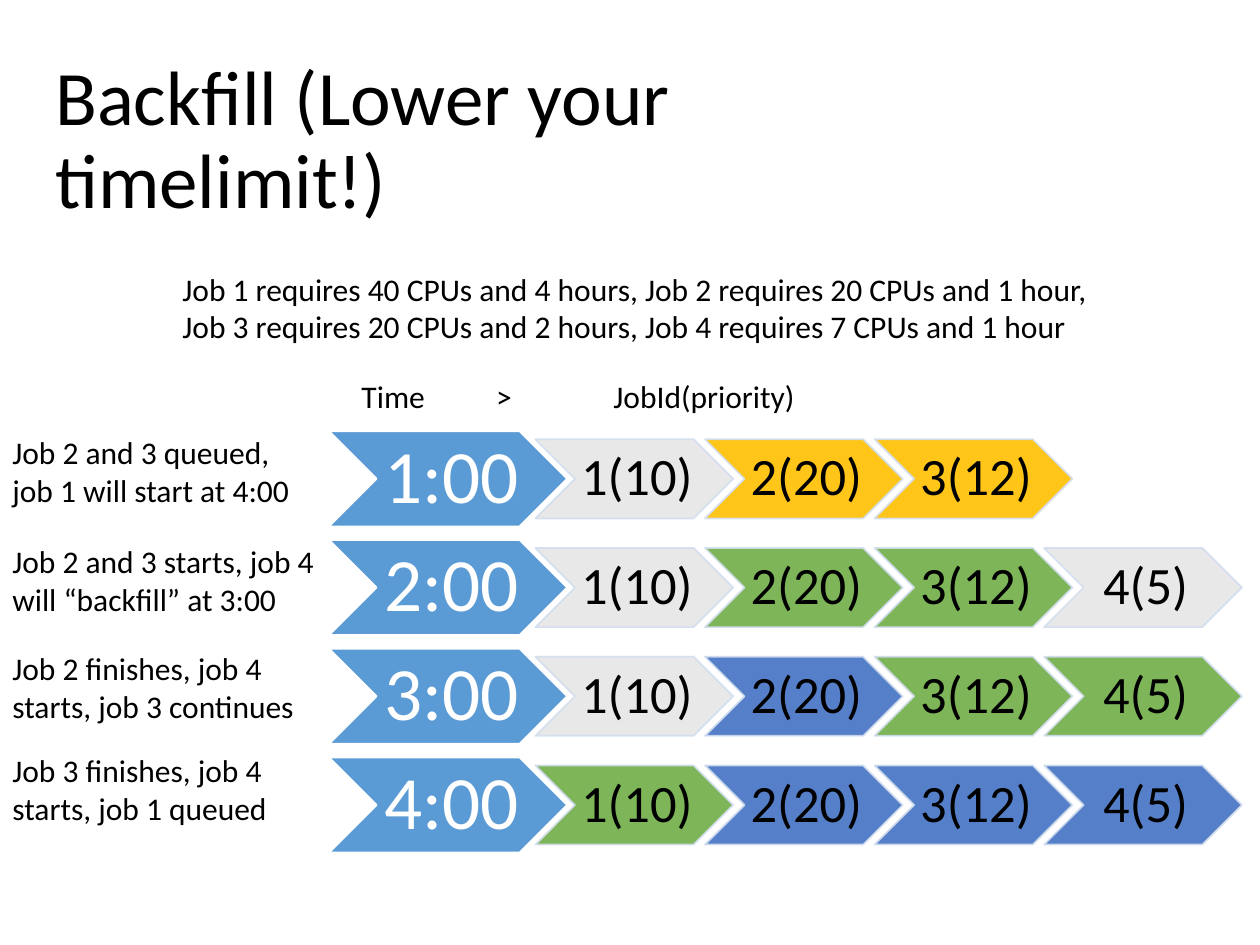
from lxml import etree
from pptx import Presentation
from pptx.dml.color import RGBColor
from pptx.enum import shapes, text
from pptx.oxml import ns
from pptx.util import Pt

HUES = {
    "ink": "000000", "white": "FFFFFF", "time": "5B9BD5", "edge": "D2DEEF",
    "wait": "E7E6E6", "queue": "FFC000", "run": "70AD47", "done": "4472C4",
}
JOBS = ["1(10)", "2(20)", "3(12)", "4(5)"]
# Time, state of each job, note, top of the note
ROWS = [
    ("1:00", ["wait", "queue", "queue"],
     "Job 2 and 3 queued, job 1 will start at 4:00", 244),
    ("2:00", ["wait", "run", "run", "wait"],
     "Job 2 and 3 starts, job 4 will “backfill” at 3:00", 306),
    ("3:00", ["wait", "done", "run", "run"],
     "Job 2 finishes, job 4 starts, job 3 continues", 367.2),
    ("4:00", ["run", "done", "done", "done"],
     "Job 3 finishes, job 4 starts, job 1 queued", 425.5),
]


def tint(paint, hue, alpha=100):
    paint.solid()
    paint.fore_color.rgb = RGBColor.from_string(HUES[hue])
    if alpha < 100:
        color = paint._xPr.find(ns.qn("a:solidFill"))[0]
        etree.SubElement(color, ns.qn("a:alpha"), val=str(alpha * 1000))


def write(slide, box, words, size=18, hue="ink", align="LEFT", anchor="TOP",
          inset=(7.2, 3.6, 7.2, 3.6), space=1.0, wrap=True, tabs=()):
    frame = slide.shapes.add_textbox(*map(Pt, box)).text_frame
    frame.word_wrap = wrap
    frame.vertical_anchor = getattr(text.MSO_ANCHOR, anchor)
    (frame.margin_left, frame.margin_top,
     frame.margin_right, frame.margin_bottom) = map(Pt, inset)
    frame.text = words
    for para in frame.paragraphs:
        para.alignment = getattr(text.PP_ALIGN, align)
        para.line_spacing = space
        if tabs:
            stops = etree.SubElement(para._p.get_or_add_pPr(), ns.qn("a:tabLst"))
            for stop in tabs:
                etree.SubElement(stops, ns.qn("a:tab"), pos=str(Pt(stop)), algn="l")
        para.font.name = "Calibri"
        para.font.size = Pt(size)
        para.font.color.rgb = RGBColor.from_string(HUES[hue])


def arrow(slide, box, words, size, fill, edge, ink, alpha, inset):
    left, top, width, height = box
    shape = slide.shapes.add_shape(shapes.MSO_SHAPE.CHEVRON, *map(Pt, box))
    shape.shadow.inherit = False
    tint(shape.fill, fill, alpha)
    shape.line.width = Pt(1)
    tint(shape.line.fill, edge, alpha)
    # The label fills the space between the notch and the point
    write(slide, (left + height / 2, top, width - height, height), words,
          size=size, hue=ink, align="CENTER", anchor="MIDDLE",
          inset=inset, space=0.9)


def header(slide, box):
    left, top, width, height = box
    write(slide, (left, top, 558, 104.4), "Backfill (Lower your timelimit!)",
          size=44, anchor="MIDDLE", space=0.9)
    write(slide, (left + 72.7, top + 121.7, 537.8, 51),
          "Job 1 requires 40 CPUs and 4 hours, Job 2 requires 20 CPUs and 1 hour,\n"
          "Job 3 requires 20 CPUs and 2 hours, Job 4 requires 7 CPUs and 1 hour",
          wrap=False)
    write(slide, (left + 175, top + height - 29, 264.2, 29),
          "Time\t>\tJobId(priority)", wrap=False, tabs=(77, 144))


def track(slide, box, time, states):
    left, top, width, height = box
    arrow(slide, (left, top, 136.1, height), time, 43,
          "time", "white", "white", 100, (4.3, 2.2, 0, 2.2))
    # Job arrows overlap at an equal step
    tall, step = 45.2, 96.9
    for i, state in enumerate(states):
        arrow(slide, (left + 118 + i * step, top + (height - tall) / 2, 113, tall),
              JOBS[i], 30, state, "edge", "ink", 90, (2.9, 1.4, 0, 1.4))


def chart(slide, box):
    left, top, width, height = box
    tall = 54.4
    step = (height - tall) / (len(ROWS) - 1)
    for i, (time, states, note, at) in enumerate(ROWS):
        write(slide, (left, at, 188, 51), note)
        track(slide, (left + 188, top + i * step, width - 188, tall), time, states)


def main():
    deck = Presentation()
    deck.slide_width, deck.slide_height = Pt(720), Pt(540)
    slide = deck.slides.add_slide(deck.slide_layouts[6])
    header(slide, (24.5, 28.8, 610.5, 212))
    chart(slide, (0, 246.4, 710, 240.8))
    deck.save("out.pptx")


if __name__ == "__main__":
    main()
